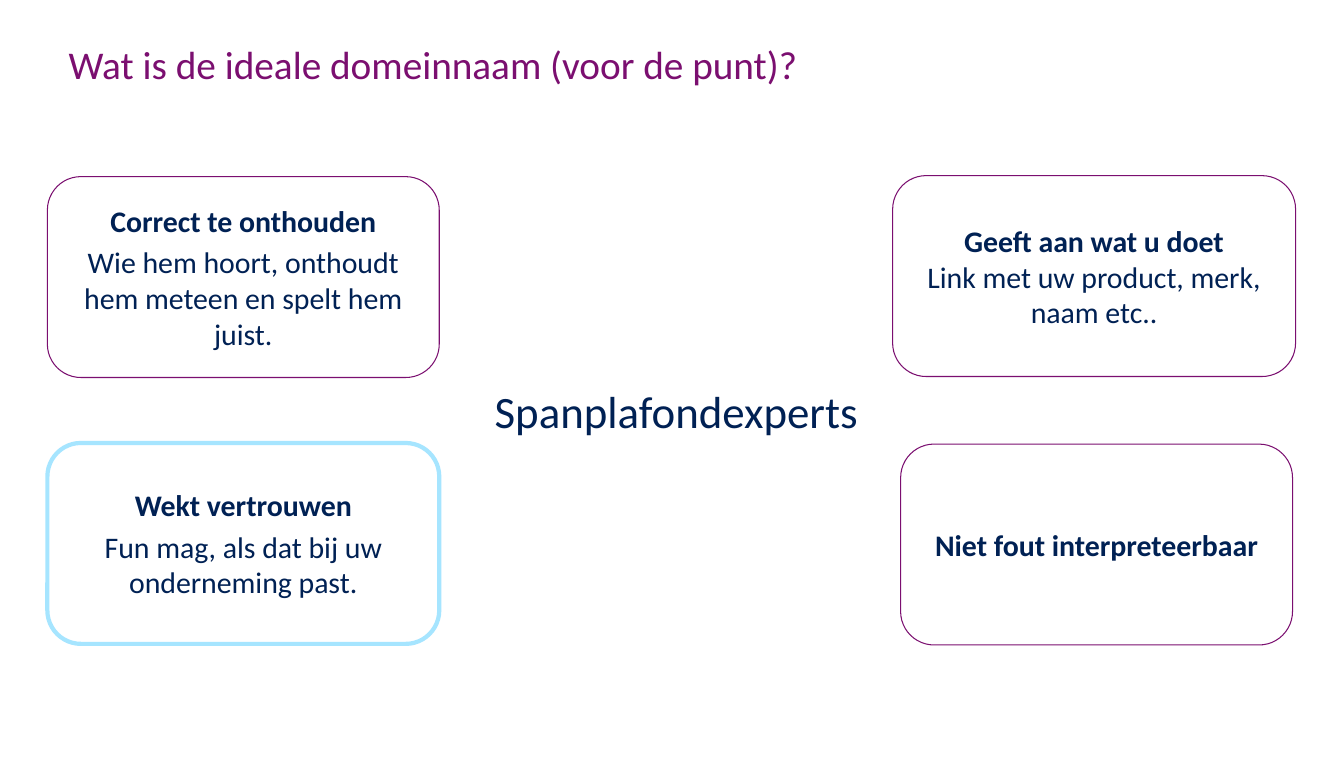
from pptx import Presentation
from pptx.dml.color import RGBColor
from pptx.enum.shapes import MSO_SHAPE as Shape
from pptx.enum.text import MSO_ANCHOR as Anchor, PP_ALIGN as Align
from pptx.util import Pt

COLORS = {"purple": "7B0F70", "navy": "002154", "sky": "A6E5FF", "white": "FFFFFF"}
CARD_HEIGHT = 143.3

# box, border colour, border width, heading, detail, space above detail
CRITERIA = [
    ((33.8, 126, 279.4, CARD_HEIGHT), "purple", 0.75, "Correct te onthouden",
     "Wie hem hoort, onthoudt hem meteen en spelt hem juist.", 4),
    ((33.8, 316, 279.4, CARD_HEIGHT), "sky", 3, "Wekt vertrouwen",
     "Fun mag, als dat bij uw onderneming past.", 4),
    ((636.5, 125.3, 287.3, CARD_HEIGHT), "purple", 0.75, "Geeft aan wat u doet",
     "Link met uw product, merk, naam etc..", 0),
    ((642.2, 316.8, 279.4, CARD_HEIGHT), "purple", 0.75, "Niet fout interpreteerbaar",
     None, 0),
]


def color(name):
    return RGBColor.from_string(COLORS[name])


def set_font(paragraph, size, color_name, bold=False):
    font = paragraph.font
    font.name, font.size, font.bold = "Calibri", Pt(size), bold
    font.color.rgb = color(color_name)


def set_margins(frame, left, top, right, bottom):
    frame.margin_left, frame.margin_top = Pt(left), Pt(top)
    frame.margin_right, frame.margin_bottom = Pt(right), Pt(bottom)


def add_title(slide, box, text):
    frame = slide.shapes.add_textbox(*map(Pt, box)).text_frame
    frame.word_wrap = True
    frame.vertical_anchor = Anchor.MIDDLE
    set_margins(frame, 14.4, 0, 8.6, 0)
    title = frame.paragraphs[0]
    title.text = text
    title.line_spacing = Pt(24)
    set_font(title, 28, "purple")


def add_domain_name(slide, box, text):
    frame = slide.shapes.add_textbox(*map(Pt, box)).text_frame
    frame.word_wrap = False
    name = frame.paragraphs[0]
    name.text = text
    set_font(name, 32, "navy")


def add_criterion(slide, box, border, border_width, heading, detail, detail_gap):
    """Draw a rounded card with a bold heading and an optional explanation."""
    card = slide.shapes.add_shape(Shape.ROUNDED_RECTANGLE, *map(Pt, box))
    card.shadow.inherit = False
    card.fill.solid()
    card.fill.fore_color.rgb = color("white")
    card.line.color.rgb = color(border)
    card.line.width = Pt(border_width)

    frame = card.text_frame
    frame.word_wrap = True
    frame.vertical_anchor = Anchor.MIDDLE
    set_margins(frame, 9.4, 5, 9.4, 5)
    title = frame.paragraphs[0]
    title.text = heading
    title.alignment = Align.CENTER
    set_font(title, 21.3, "navy", bold=True)
    if detail:
        explanation = frame.add_paragraph()
        explanation.text = detail
        explanation.alignment = Align.CENTER
        explanation.space_before = Pt(detail_gap)
        set_font(explanation, 21.3, "navy")


def main():
    deck = Presentation()
    deck.slide_width, deck.slide_height = Pt(958.3), Pt(540)
    slide = deck.slides.add_slide(deck.slide_layouts[6])
    for criterion in CRITERIA:
        add_criterion(slide, *criterion)
    add_title(slide, (34.6, 23.8, 898.6, 52.6),
              "Wat is de ideale domeinnaam (voor de punt)?")
    add_domain_name(slide, (345.6, 270, 276.5, 46), "Spanplafondexperts")
    deck.save("out.pptx")


if __name__ == "__main__":
    main()
